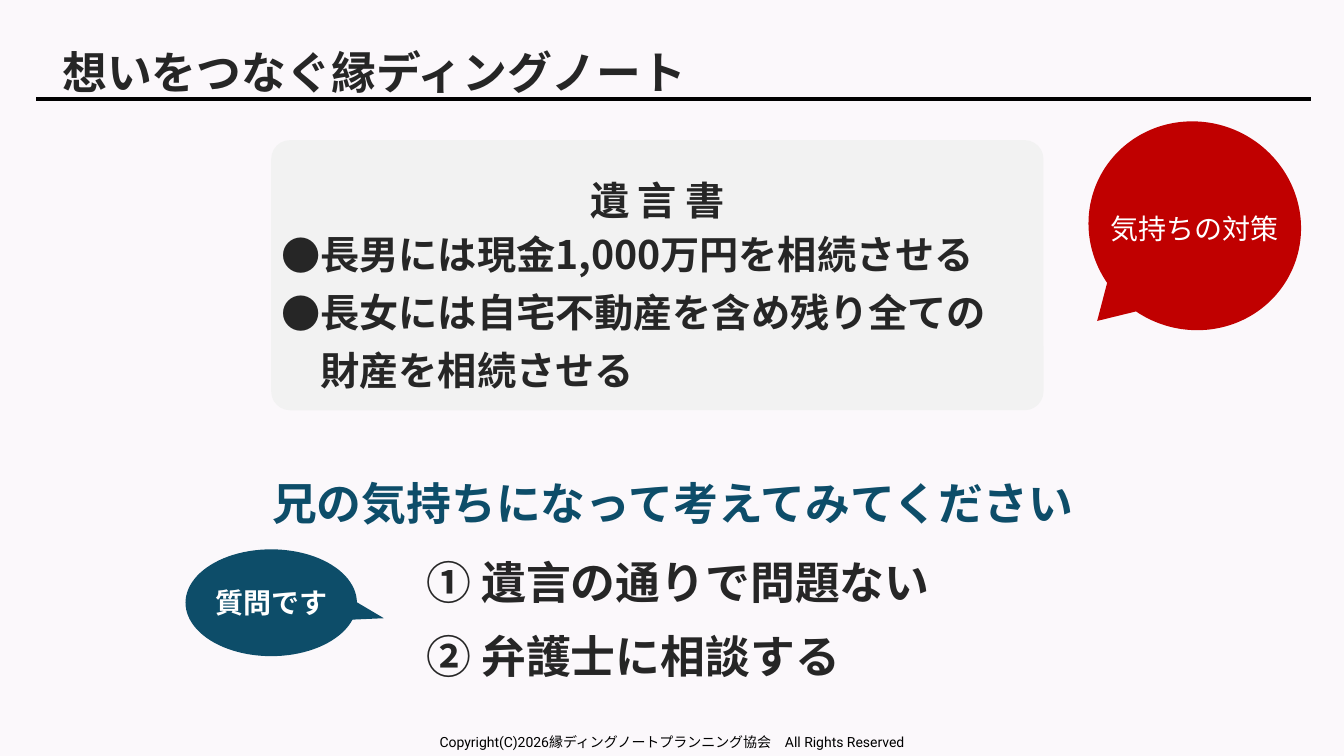
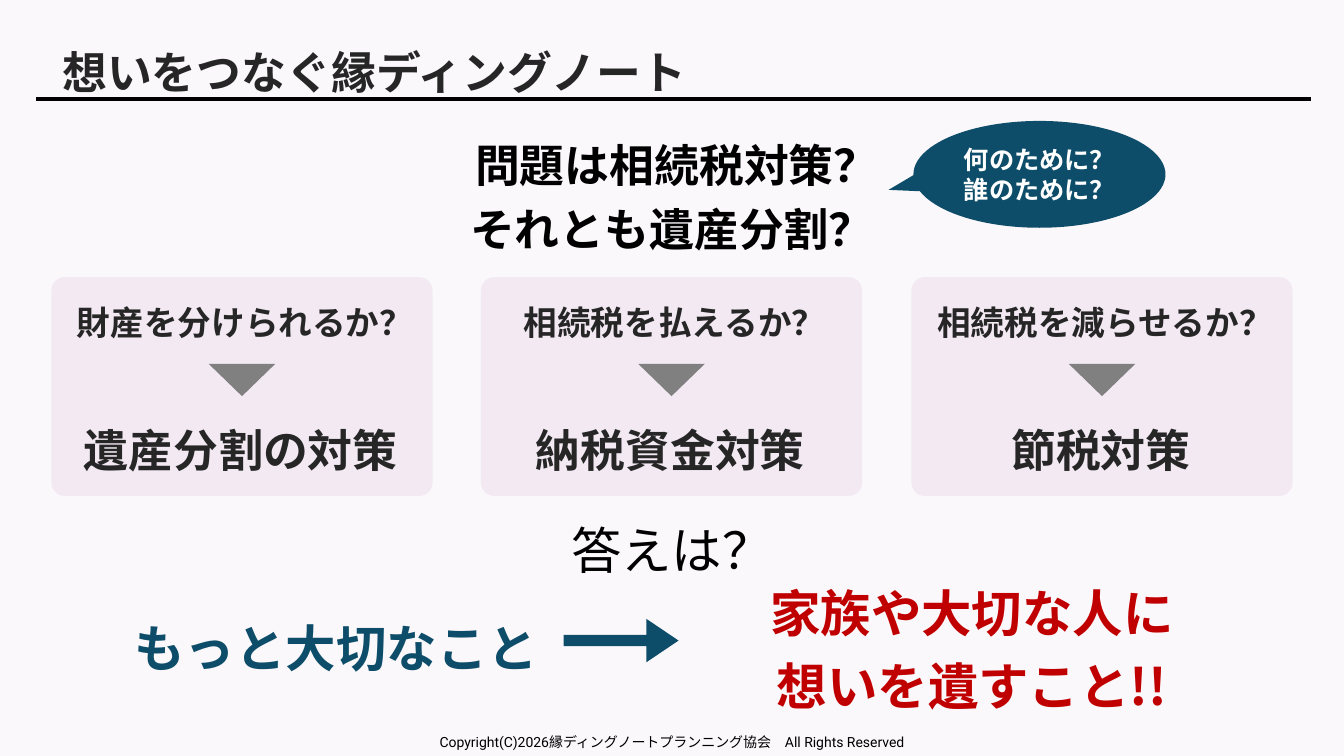
from lxml import etree
from pptx import Presentation
from pptx.dml.color import RGBColor
from pptx.enum.shapes import MSO_CONNECTOR, MSO_SHAPE
from pptx.enum.text import MSO_ANCHOR, PP_ALIGN
from pptx.oxml.ns import qn
from pptx.util import Pt

PX = 9144
WIDE, HIGH = 1333, 750
LEFT, MID = PP_ALIGN.LEFT, PP_ALIGN.CENTER
TOP, CORE = MSO_ANCHOR.TOP, MSO_ANCHOR.MIDDLE
ROUND, OVAL = MSO_SHAPE.ROUNDED_RECTANGLE, MSO_SHAPE.OVAL
WEDGE, ARROW = MSO_SHAPE.OVAL_CALLOUT, MSO_SHAPE.RIGHT_ARROW
PEAK = MSO_SHAPE.ISOSCELES_TRIANGLE
LINE = MSO_CONNECTOR.STRAIGHT
FONT = "Noto Sans CJK JP"
INK, BLACK, WHITE = "262626", "000000", "FFFFFF"
TEAL, RED, GRAY = "0D4D69", "C00000", "808080"
PALE, MIST, BACK = "F2F2F2", "F2E9F3", "FBF8FB"
hue = RGBColor.from_string


def draw(page, kind, box, fill, turn=0, bends=()):
    shape = page.shapes.add_shape(kind, *[n * PX for n in box])
    shape.shadow.inherit = False
    shape.fill.solid()
    shape.fill.fore_color.rgb = hue(fill)
    shape.line.fill.background()
    shape.rotation = turn
    for i, bend in enumerate(bends):
        shape.adjustments[i] = bend
    return shape


def write(page, box, text, size, color, bold=True, align=MID, lead=None,
          anchor=CORE, font=FONT, shape=None):
    if shape is None:
        shape = page.shapes.add_textbox(*[n * PX for n in box])
    frame = shape.text_frame
    frame.text = text
    frame.word_wrap = True
    frame.vertical_anchor = anchor
    for para in frame.paragraphs:
        para.alignment = align
        if lead:
            para.line_spacing = lead
        for run in para.runs:
            run.font.size = Pt(size)
            run.font.bold = bold
            run.font.name = font
            run.font.color.rgb = hue(color)
            east = etree.SubElement(run._r.get_or_add_rPr(), qn("a:ea"))
            east.set("typeface", FONT)
    return frame


deck = Presentation()
deck.slide_width, deck.slide_height = WIDE * PX, HIGH * PX
pages = [deck.slides.add_slide(deck.slide_layouts[6]) for _ in range(2)]

for page in pages:
    page.background.fill.solid()
    page.background.fill.fore_color.rgb = hue(BACK)
    write(page, (52, 38, 1020, 60), "想いをつなぐ縁ディングノート", 32, INK,
          align=LEFT, lead=1.1)
    rule = page.shapes.add_connector(LINE, 36 * PX, 98 * PX, 1300 * PX, 98 * PX)
    rule.line.color.rgb = hue(BLACK)
    rule.line.width = Pt(3)
    etree.SubElement(rule._element.spPr, qn("a:effectLst"))
    write(page, (0, 723, WIDE, 26),
          "Copyright(C)2026縁ディングノートプランニング協会　All Rights Reserved",
          10, BLACK, bold=False, anchor=TOP, font="Roboto")

will, aim = pages

draw(will, ROUND, (269, 139, 766, 268), PALE, bends=[0.07])
head = write(will, (269, 160, 766, 61), "遺言書", 28, INK, lead=1.35)
head.paragraphs[0].runs[0]._r.get_or_add_rPr().set("spc", "600")
terms = write(will, (269, 241, 766, 126),
              "長男には現金1,000万円を相続させる\n"
              "長女には自宅不動産を含め残り全ての\v財産を相続させる",
              28, INK, align=LEFT)
for para in terms.paragraphs:
    props = para._p.get_or_add_pPr()
    props.set("marL", str(39 * PX))
    props.set("indent", str(-39 * PX))
    etree.SubElement(props, qn("a:buFont")).set("typeface", FONT)
    etree.SubElement(props, qn("a:buChar")).set("char", "●")
    para.line_spacing = 1.23

write(will, (260, 465, 973, 67), "兄の気持ちになって考えてみてください",
      32, TEAL, align=LEFT)
for i, choice in enumerate(["① 遺言の通りで問題ない", "② 弁護士に相談する"]):
    write(will, (413, 545 + 74 * i, 553, 64), choice, 32, INK,
          align=LEFT, anchor=TOP)
draw(will, WEDGE, (1079, 121, 212, 206), RED, 26.5, [-0.21, 0.62])
write(will, (1088, 204, 193, 44), "気持ちの対策", 20, WHITE, bold=False)

bubbles = [
    (will, (184, 545, 170, 106), (340, 581, 31, 52), 104,
     "質問です", 20, None),
    (aim, (906, 120, 250, 106), (891, 156, 31, 52), 256,
     "何のために？\n誰のために？", 18, Pt(21.5)),
]
for page, box, tail, turn, text, size, lead in bubbles:
    draw(page, PEAK, tail, TEAL, turn)
    oval = draw(page, OVAL, box, TEAL)
    frame = write(page, box, text, size, WHITE, lead=lead, shape=oval)
    frame.margin_left = frame.margin_right = 0

write(aim, (0, 131, WIDE, 118), " 問題は相続税対策？\nそれとも遺産分割？",
      32, BLACK, lead=Pt(46))
cards = [
    ("財産を分けられるか？", "遺産分割の対策"),
    ("相続税を払えるか？", "納税資金対策"),
    ("相続税を減らせるか？", "節税対策"),
]
for i, (ask, plan) in enumerate(cards):
    x = 51 + i * 853 // 2
    draw(aim, ROUND, (x, 275, 378, 217), MIST, bends=[0.06])
    write(aim, (x + 8, 295, 368, 50), ask, 24, INK)
    draw(aim, PEAK, (x + 156, 361, 66, 32), GRAY, 180)
    write(aim, (x, 414, 376, 64), plan, 32, INK)

write(aim, (0, 498, WIDE, 81), "答えは？", 36, BLACK, bold=False, lead=Pt(52))
write(aim, (100, 596, 467, 81), "もっと大切なこと", 36, TEAL, lead=Pt(52))
draw(aim, ARROW, (559, 614, 114, 43), TEAL, bends=[0.26, 0.74])
write(aim, (634, 597, 660, 81), "家族や大切な人に\n想いを遺すこと!!",
      36, RED, lead=Pt(52))

deck.save("out.pptx")
